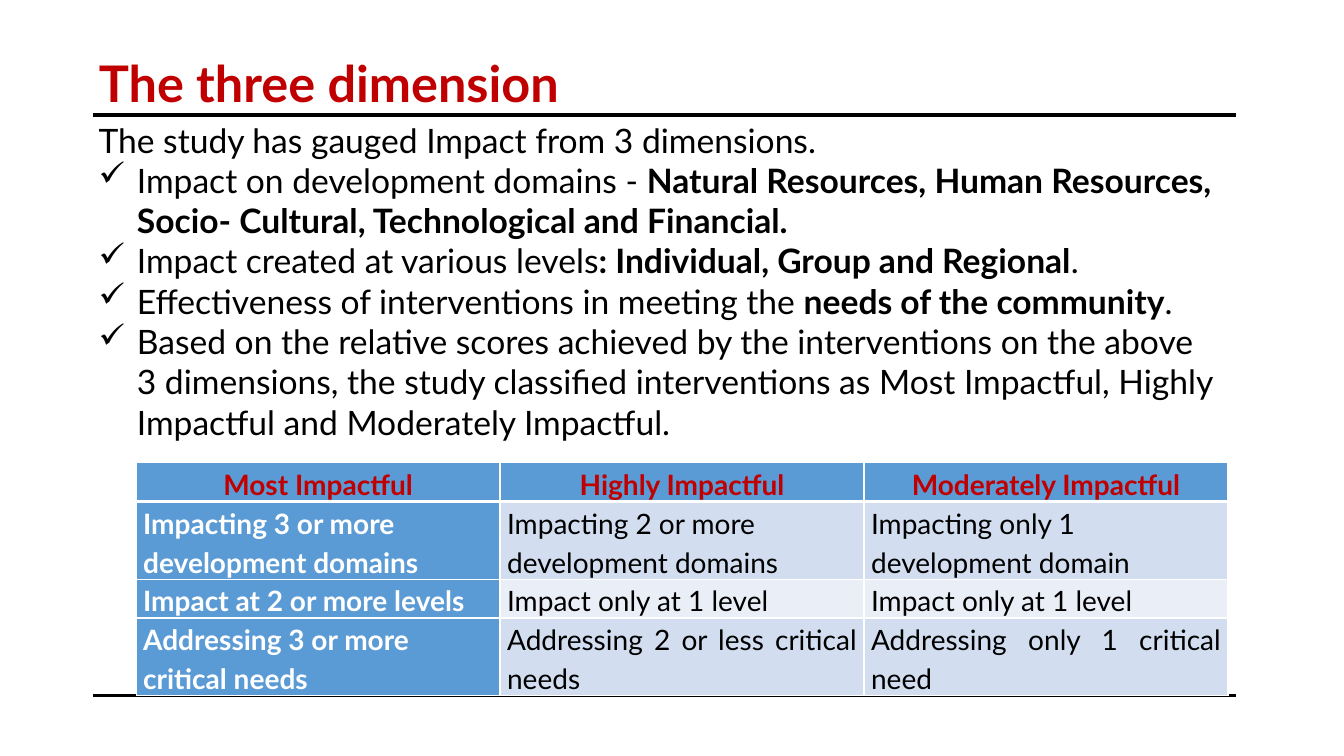
import pptx
import pptx.dml.color
import pptx.enum.shapes
import pptx.enum.text
import pptx.oxml
import pptx.oxml.ns
import pptx.util
from lxml import etree
from pptx.util import Inches

ALIGN = pptx.enum.text.PP_ALIGN
ANCHOR = pptx.enum.text.MSO_ANCHOR
RED, BLACK, WHITE, BLUE = "C00000", "000000", "FFFFFF", "5B9BD5"
BANDS = ["D2DEEF", "EAEFF7"]

# Each paragraph: bulleted, alignment, [(text, bold), ...]
DIMENSIONS = [
    (False, ALIGN.LEFT, [("The study has gauged Impact from 3 dimensions.", False)]),
    (True, ALIGN.LEFT, [
        ("Impact on development domains - ", False),
        ("Natural Resources, Human Resources, Socio- Cultural, "
         "Technological and Financial.", True)]),
    (True, ALIGN.LEFT, [
        ("Impact created at various levels", False),
        (": Individual, Group and Regional", True), (".", False)]),
    (True, ALIGN.JUSTIFY, [
        ("Effectiveness of interventions in meeting the ", False),
        ("needs of the community", True), (".", False)]),
    (True, ALIGN.LEFT, [
        ("Based on the relative scores achieved by the interventions on the above "
         "3 dimensions, the study classified interventions as Most Impactful, "
         "Highly Impactful and Moderately Impactful.", False)]),
]

CLASSES = [
    ["Most Impactful", "Highly Impactful", "Moderately Impactful"],
    ["Impacting 3 or more development domains",
     "Impacting 2 or more development domains",
     "Impacting only 1 development domain"],
    ["Impact at 2 or more levels", "Impact only at 1 level", "Impact only at 1 level"],
    ["Addressing 3 or more critical needs",
     "Addressing 2 or less critical needs",
     "Addressing only 1 critical need"],
]
ROW_HEIGHTS = [0.38, 0.77, 0.38, 0.77]


def color(value):
    return pptx.dml.color.RGBColor.from_string(value)


class SlideBuilder:
    def __init__(self, slide, font_name):
        self.slide = slide
        self.font_name = font_name

    def style(self, paragraph, size, text_color, bold=None):
        font = paragraph.font
        font.name = self.font_name
        font.size = pptx.util.Pt(size)
        font.color.rgb = color(text_color)
        font.bold = bold

    def place(self, shape, left, top, width, height):
        shape.left, shape.top = Inches(left), Inches(top)
        shape.width, shape.height = Inches(width), Inches(height)

    def rule(self, y, weight):
        line = self.slide.shapes.add_connector(
            pptx.enum.shapes.MSO_CONNECTOR.STRAIGHT,
            Inches(0.92), Inches(y), Inches(12.26), Inches(y))
        line.line.color.rgb = color(BLACK)
        line.line.width = pptx.util.Pt(weight)
        properties = line._element.spPr
        etree.SubElement(properties, pptx.oxml.ns.qn("a:effectLst"))

    def title(self, text, left, top, width, height):
        shape = self.slide.shapes.title
        self.place(shape, left, top, width, height)
        frame = shape.text_frame
        frame.text = text
        frame.word_wrap = True
        frame.auto_size = pptx.enum.text.MSO_AUTO_SIZE.NONE
        frame.vertical_anchor = ANCHOR.TOP
        paragraph = frame.paragraphs[0]
        paragraph.alignment = ALIGN.LEFT
        paragraph.line_spacing = 1.15
        self.style(paragraph, 36, RED, True)

    def bullet(self, paragraph):
        properties = paragraph._p.get_or_add_pPr()
        properties.set("marL", str(Inches(0.38)))
        properties.set("indent", str(-Inches(0.38)))
        mark = etree.SubElement(properties, pptx.oxml.ns.qn("a:buChar"))
        mark.set("char", "✓")

    def body(self, paragraphs, left, top, width, height):
        box = self.slide.shapes.add_textbox(0, 0, 0, 0)
        self.place(box, left, top, width, height)
        frame = box.text_frame
        frame.word_wrap = True
        frame.vertical_anchor = ANCHOR.MIDDLE
        for index, (bulleted, alignment, runs) in enumerate(paragraphs):
            paragraph = frame.add_paragraph() if index else frame.paragraphs[0]
            paragraph.alignment = alignment
            if bulleted:
                self.bullet(paragraph)
            self.style(paragraph, 24, BLACK)
            for text, bold in runs:
                run = paragraph.add_run()
                run.text = text
                run.font.bold = bold

    def borders(self, cell, weights):
        properties = cell._tc.get_or_add_tcPr()
        for side, weight in weights.items():
            properties.append(pptx.oxml.parse_xml(
                f'<a:ln{side} {pptx.oxml.ns.nsdecls("a")} w="{pptx.util.Pt(weight)}">'
                f'<a:solidFill><a:srgbClr val="{WHITE}"/></a:solidFill></a:ln{side}>'))

    def cell(self, cell, text, fill, text_color, bold, alignment, weights):
        self.borders(cell, weights)
        cell.fill.solid()
        cell.fill.fore_color.rgb = color(fill)
        cell.margin_left = cell.margin_right = Inches(0.07)
        cell.margin_top = cell.margin_bottom = 0
        cell.text = text
        paragraph = cell.text_frame.paragraphs[0]
        paragraph.alignment = alignment
        paragraph.line_spacing = 1.15
        self.style(paragraph, 20, text_color, bold)

    def table(self, rows, heights, left, top, width):
        table = self.slide.shapes.add_table(
            len(rows), len(rows[0]), Inches(left), Inches(top),
            Inches(width), Inches(sum(heights))).table
        table.first_col = True
        for r, (texts, height) in enumerate(zip(rows, heights)):
            table.rows[r].height = Inches(height)
            weights = {"L": 1, "R": 1, "T": 3 if r == 1 else 1, "B": 3 if r == 0 else 1}
            for c, text in enumerate(texts):
                if r == 0:
                    look = BLUE, RED, True, ALIGN.CENTER
                elif c == 0:
                    look = BLUE, WHITE, True, ALIGN.LEFT
                else:
                    alignment = ALIGN.LEFT if r == 1 else ALIGN.JUSTIFY
                    look = BANDS[(r - 1) % 2], BLACK, False, alignment
                self.cell(table.cell(r, c), text, *look, weights)


def main():
    presentation = pptx.Presentation()
    presentation.slide_width = Inches(13.33)
    presentation.slide_height = Inches(7.5)
    slide = presentation.slides.add_slide(presentation.slide_layouts[5])
    builder = SlideBuilder(slide, "Lato")

    # Title and page rules
    builder.title("The three dimension", 0.88, 0.38, 11.3, 0.74)
    builder.rule(1.14, 3)
    builder.rule(6.9, 1.5)

    # Classification table
    builder.table(CLASSES, ROW_HEIGHTS, 1.35, 4.59, 10.83)

    # Dimensions of impact
    builder.body(DIMENSIONS, 0.88, 1.12, 11.26, 3.33)

    presentation.save("out.pptx")


if __name__ == "__main__":
    main()
